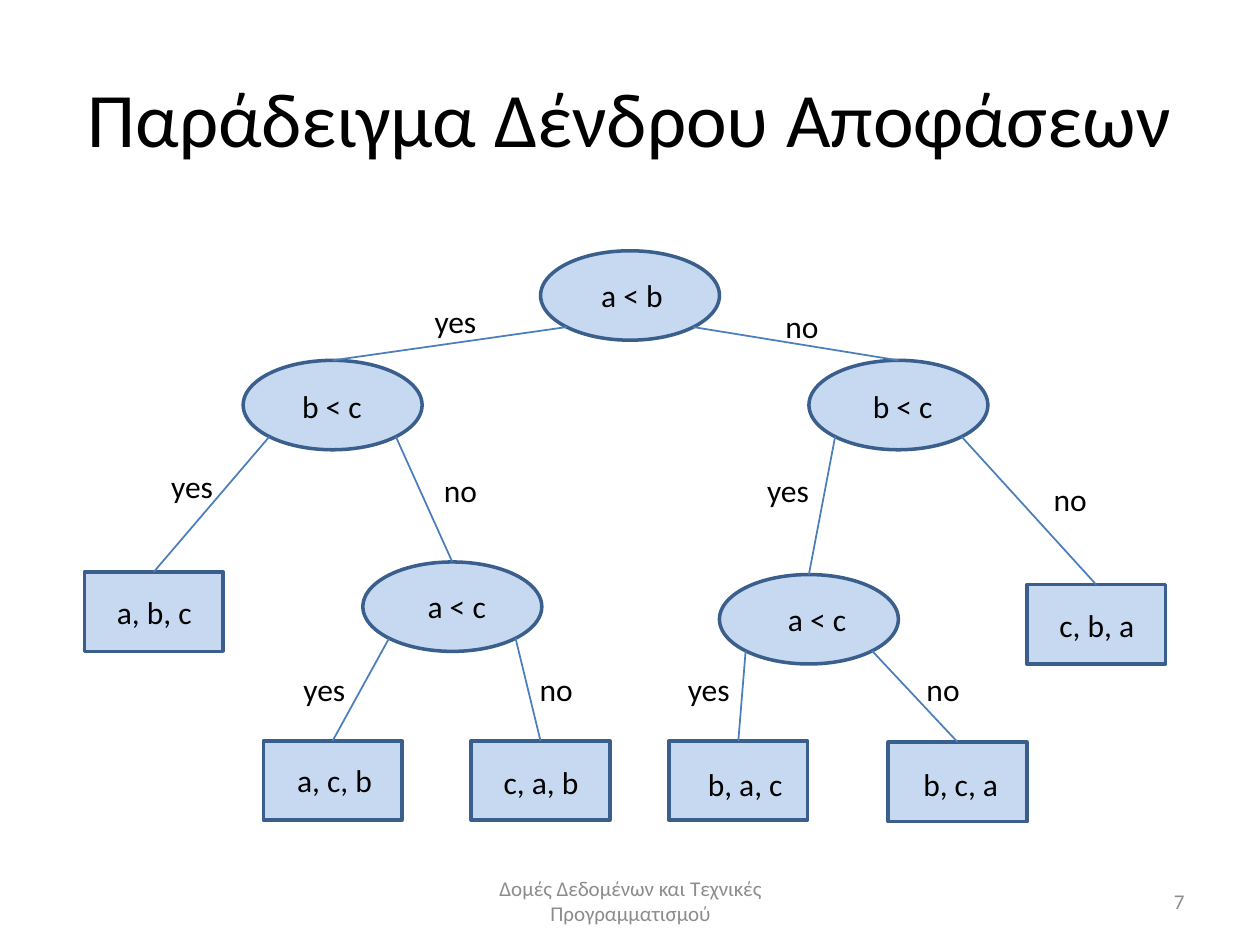
import math
import pptx
import pptx.util
import pptx.dml.color
import pptx.enum.shapes
import pptx.enum.text
import pptx.oxml.ns
import lxml.etree

RGBColor = pptx.dml.color.RGBColor
SHAPE = pptx.enum.shapes.MSO_SHAPE
ALIGN = pptx.enum.text.PP_ALIGN
ANCHOR = pptx.enum.text.MSO_ANCHOR
AUTO_SIZE = pptx.enum.text.MSO_AUTO_SIZE

BLACK = RGBColor(0x00, 0x00, 0x00)
GREY = RGBColor(0x8C, 0x8C, 0x8C)
NODE_FILL = RGBColor(0xC6, 0xD9, 0xF1)
NODE_LINE = RGBColor(0x3A, 0x5F, 0x8C)
EDGE_LINE = RGBColor(0x4B, 0x7E, 0xBC)

COLUMNS, ROWS = 100, 75
TEST_SIZE = (14.2, 7.1)
LEAF_SIZE = (11, 6.3)
LABEL_SIZE = (8.7, 4)

TESTS = {
    "root": (42.9, 19.9),
    "left": (19.3, 28.6),
    "right": (64.2, 28.6),
    "left_no": (28.8, 44.6),
    "right_yes": (57.1, 45.6),
}
LEAVES = {
    "abc": (6.7, 45.4),
    "acb": (20.9, 58.8),
    "cab": (37.4, 58.8),
    "cba": (81.5, 46.4),
    "bac": (53.1, 58.8),
    "bca": (70.5, 58.9),
}
BRANCHES = [
    ("root", "left", "right"),
    ("left", "abc", "left_no"),
    ("right", "right_yes", "cba"),
    ("right_yes", "bac", "bca"),
    ("left_no", "acb", "cab"),
]
LABELS = [
    ("a < b", 45.8, 21.4),
    ("a < c", 31.9, 46.1),
    ("b < c", 22, 30.2),
    ("a < c", 60.5, 47.1),
    ("b < c", 67.3, 30.2),
    ("a, b, c", 7.9, 46.6),
    ("a, c, b", 22.2, 59.9),
    ("c, a, b", 38.6, 60.1),
    ("b, a, c", 54.8, 60.2),
    ("b, c, a", 71.9, 60.2),
    ("c, b, a", 82.7, 47.6),
    ("yes", 31.8, 23.5),
    ("no", 59.3, 23.9),
    ("yes", 10.9, 36.6),
    ("yes", 21.4, 52.7),
    ("yes", 51.9, 52.7),
    ("yes", 58.2, 36.9),
    ("no", 80.6, 37.6),
    ("no", 70.5, 52.7),
    ("no", 32.2, 36.9),
    ("no", 39.8, 52.7),
]


class TreeSlide:
    font = "Calibri"

    def __init__(self, prs):
        self.cell_w = prs.slide_width / COLUMNS
        self.cell_h = prs.slide_height / ROWS
        self.s = prs.slides.add_slide(prs.slide_layouts[5])

    def box(self, col, row, cols, rows):
        return (round(col * self.cell_w), round(row * self.cell_h),
                round(cols * self.cell_w), round(rows * self.cell_h))

    def add_text(self, sp, text, size, color, align, anchor):
        tf = sp.text_frame
        tf.word_wrap = True
        tf.vertical_anchor = anchor
        p = tf.paragraphs[0]
        p.alignment = align
        r = p.add_run()
        r.text = text
        r.font.name = self.font
        r.font.size = pptx.util.Pt(size)
        r.font.color.rgb = color
        return tf

    def title(self, text, *place):
        sp = self.s.shapes.title
        sp.left, sp.top, sp.width, sp.height = self.box(*place)
        self.add_text(sp, text, 44, BLACK, ALIGN.CENTER, ANCHOR.MIDDLE)

    def footer(self, text, align, *place):
        sp = self.s.shapes.add_textbox(*self.box(*place))
        self.add_text(sp, text, 12, GREY, align, ANCHOR.MIDDLE)

    def label(self, text, col, row):
        sp = self.s.shapes.add_textbox(*self.box(col, row, *LABEL_SIZE))
        tf = self.add_text(sp, text, 18, BLACK, ALIGN.CENTER, ANCHOR.TOP)
        tf.auto_size = AUTO_SIZE.SHAPE_TO_FIT_TEXT

    def node(self, kind, place, size):
        sp = self.s.shapes.add_shape(kind, *self.box(*place, *size))
        sp.shadow.inherit = False
        sp.fill.solid()
        sp.fill.fore_color.rgb = NODE_FILL
        sp.line.color.rgb = NODE_LINE
        sp.line.width = pptx.util.Pt(2)
        return sp

    def edge(self, parent, child, side):
        reach = math.sqrt(0.5) / 2
        x = round(parent.left + parent.width * (0.5 + side * reach))
        y = round(parent.top + parent.height * (0.5 + reach))
        line = self.s.shapes.add_connector(
            pptx.enum.shapes.MSO_CONNECTOR.STRAIGHT, x, y,
            child.left + child.width // 2, child.top)
        line.end_connect(child, 0)
        line.line.color.rgb = EDGE_LINE
        line.line.width = pptx.util.Pt(1)
        lxml.etree.SubElement(line._element.spPr, pptx.oxml.ns.qn("a:effectLst"))


def main():
    prs = pptx.Presentation()
    prs.slide_width = pptx.util.Inches(10)
    prs.slide_height = pptx.util.Inches(7.5)
    slide = TreeSlide(prs)
    slide.title("Παράδειγμα Δένδρου Αποφάσεων", 5, 3, 90, 12.5)
    slide.footer("Δομές Δεδομένων και Τεχνικές Προγραμματισμού",
                 ALIGN.CENTER, 34.2, 69.5, 31.7, 4)
    slide.footer("7", ALIGN.RIGHT, 71.7, 69.5, 23.3, 4)

    nodes = {}
    for kind, places, size in ((SHAPE.OVAL, TESTS, TEST_SIZE),
                               (SHAPE.RECTANGLE, LEAVES, LEAF_SIZE)):
        for name, place in places.items():
            nodes[name] = slide.node(kind, place, size)
    for parent, yes, no in BRANCHES:
        slide.edge(nodes[parent], nodes[yes], -1)
        slide.edge(nodes[parent], nodes[no], 1)
    for label in LABELS:
        slide.label(*label)
    prs.save("out.pptx")


if __name__ == "__main__":
    main()
